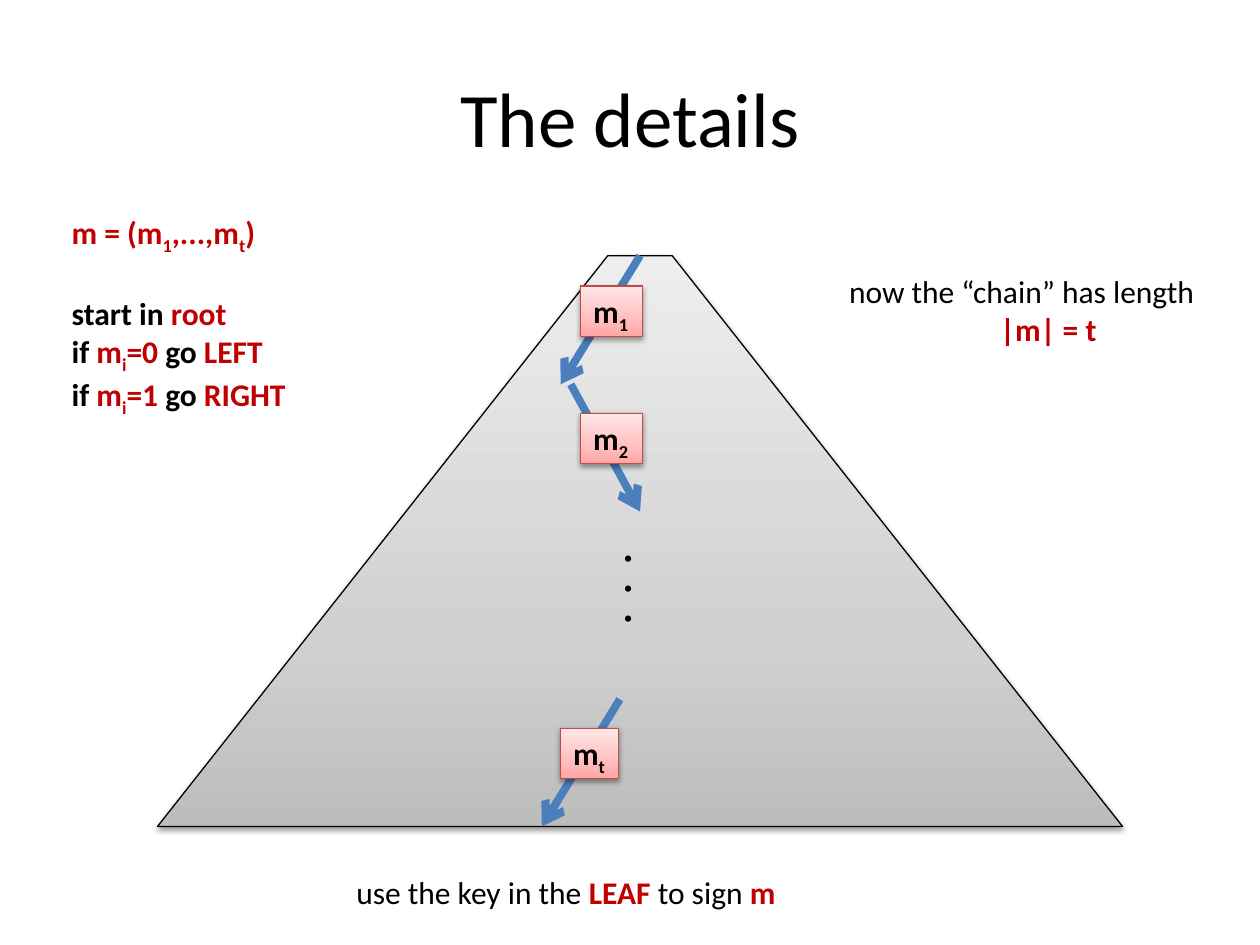
from dataclasses import dataclass

from lxml import etree
from pptx import Presentation
from pptx import util as u
from pptx.dml.color import RGBColor
from pptx.enum import shapes, text
from pptx.oxml import ns


@dataclass(frozen=True)
class Theme:
    """Colours, font and type sizes."""
    font: str = "Calibri"
    ink: str = "000000"
    red: str = "C00000"
    blue: str = "4B7EBC"
    rim: str = "BF4C48"
    grey: tuple = ((0, "BDBDBD"), (35, "D1D1D1"), (100, "EEEEEE"))
    pink: tuple = ((0, "FFA6A5"), (35, "FFC0BF"), (100, "FFE7E7"))
    head: int = 44
    dots: int = 24
    body: int = 18


def add(node, tag, **attrs):
    """Append a drawing element and return it."""
    return etree.SubElement(node, ns.qn("a:" + tag), attrs)


class Deck:
    """Holds the theme and the current slide."""

    def __init__(self, theme):
        """Open a slide with a title only."""
        self.theme = theme
        self.file = Presentation()
        self.file.slide_width, self.file.slide_height = u.Inches(10), u.Inches(7.5)
        self.slide = self.file.slides.add_slide(self.file.slide_layouts[5])

    def place(self, item, box):
        """Move and size an item."""
        for key, val in zip(("left", "top", "width", "height"), box):
            setattr(item, key, u.Inches(val))

    def label(self, frame, paras, size, **form):
        """Fill a frame; run marks are r red, b bold, s subscript."""
        base = {"word_wrap": True, "vertical_anchor": text.MSO_ANCHOR.TOP}
        for key, val in (base | form).items():
            setattr(frame, key, val)
        for i, runs in enumerate(paras):
            para = frame.add_paragraph() if i else frame.paragraphs[0]
            para.alignment = text.PP_ALIGN.LEFT
            for words, marks in runs:
                run = para.add_run()
                run.text = words
                look = {"name": self.theme.font, "size": u.Pt(size), "bold": "b" in marks}
                for key, val in look.items():
                    setattr(run.font, key, val)
                tint = self.theme.red if "r" in marks else self.theme.ink
                run.font.color.rgb = RGBColor.from_string(tint)
                if "s" in marks:
                    run.font._element.set("baseline", "-25000")
        return frame.paragraphs

    def title(self, words, box):
        """Set the slide title."""
        item = self.slide.shapes.title
        self.place(item, box)
        paras = self.label(item.text_frame, [[(words, "")]], self.theme.head,
                           vertical_anchor=text.MSO_ANCHOR.MIDDLE)
        paras[0].alignment = text.PP_ALIGN.CENTER

    def note(self, box, paras, size=None, wrap=True, turn=0):
        """Add a text box and return its paragraphs."""
        item = self.slide.shapes.add_textbox(*map(u.Inches, box))
        item.rotation = turn
        return self.label(item.text_frame, paras, size or self.theme.body, word_wrap=wrap,
                          auto_size=text.MSO_AUTO_SIZE.SHAPE_TO_FIT_TEXT)

    def shade(self, item, stops, line):
        """Give a shape its gradient, outline and soft shadow."""
        item.fill.gradient()
        item.fill.gradient_angle = 90
        ramp = item.element.spPr.find(".//" + ns.qn("a:gsLst"))
        for old in list(ramp):
            ramp.remove(old)
        for pos, tint in stops:
            add(add(ramp, "gs", pos=str(pos * 1000)), "srgbClr", val=tint)
        item.line.color.rgb = RGBColor.from_string(line)
        item.line.width = u.Pt(0.75)
        item.shadow.inherit = False
        glow = add(item.element.spPr.find(ns.qn("a:effectLst")), "outerShdw",
                   blurRad=str(u.Pt(3.1)), dist=str(u.Pt(1.6)), dir="5400000", rotWithShape="0")
        add(add(glow, "srgbClr", val=self.theme.ink), "alpha", val="38000")

    def tree(self, box, slope):
        """Draw the tree as a trapezoid."""
        item = self.slide.shapes.add_shape(shapes.MSO_SHAPE.TRAPEZOID, *map(u.Inches, box))
        item.adjustments[0] = slope
        self.shade(item, self.theme.grey, self.theme.ink)

    def arrow(self, pool, start, end):
        """Draw an arrow in a shape pool."""
        item = pool.add_connector(shapes.MSO_CONNECTOR.STRAIGHT, *map(u.Inches, start + end))
        item.line.color.rgb = RGBColor.from_string(self.theme.blue)
        item.line.width = u.Pt(4.5)
        add(item.element.spPr.find(ns.qn("a:ln")), "tailEnd", type="arrow")
        add(item.element.spPr, "effectLst")

    def step(self, start, end, box, sub):
        """Group an arrow with the message bit on it."""
        pool = self.slide.shapes.add_group_shape().shapes
        self.arrow(pool, start, end)
        item = pool.add_shape(shapes.MSO_SHAPE.RECTANGLE, *map(u.Inches, box))
        self.shade(item, self.theme.pink, self.theme.rim)
        self.label(item.text_frame, [[("m", "b"), (sub, "bs")]], self.theme.body,
                   word_wrap=False, auto_size=text.MSO_AUTO_SIZE.SHAPE_TO_FIT_TEXT)


def rule(bit, side):
    """Word the rule for one bit value."""
    return [("if ", "b"), ("m", "rb"), ("i", "rbs"), (f"={bit} ", "rb"),
            ("go", "b"), (f" {side}", "rb")]


def main():
    """Build the slide."""
    theme = Theme()
    deck = Deck(theme)
    deck.title("The details", (0.5, 0.3, 9, 1.25))
    deck.tree((1.25, 2.03, 7.66, 4.53), 0.789)

    steps = (
        ((4.53, 3.05), (5.08, 4.06), (4.61, 3.28, 0.49, 0.4), "2"),
        ((5.08, 2.03), (4.45, 3.05), (4.61, 2.27, 0.49, 0.4), "1"),
        ((4.92, 5.55), (4.3, 6.56), (4.45, 5.78, 0.46, 0.4), "t"),
    )
    for step in steps:
        deck.step(*step)

    dots = deck.note((4.71, 4.43, 0.77, 0.5), [[(". . .", "b")]], theme.dots, False, 90)
    dots[0].runs[0].font._element.set("spc", "270")

    walk = deck.note((0.47, 1.64, 2.42, 1.62), [
        [("m = (m", "rb"), ("1", "rbs"), (",...,m", "rb"), ("t", "rbs"), (")", "rb")],
        [("start in ", "b"), ("root", "rb")],
        rule(0, "LEFT"),
        rule(1, "RIGHT"),
    ])
    walk[1].space_before = u.Pt(22)

    deck.note((2.73, 6.88, 3.56, 0.4), [
        [("use the key in the ", ""), ("LEAF", "rb"), (" to sign ", ""), ("m", "rb")],
    ], wrap=False)
    chain = deck.note((6.64, 2.11, 3.36, 0.71), [
        [("now the “chain” has length", "")],
        [("|m| = t", "rb")],
    ])
    chain[1].alignment = text.PP_ALIGN.CENTER
    deck.file.save("out.pptx")


if __name__ == "__main__":
    main()
